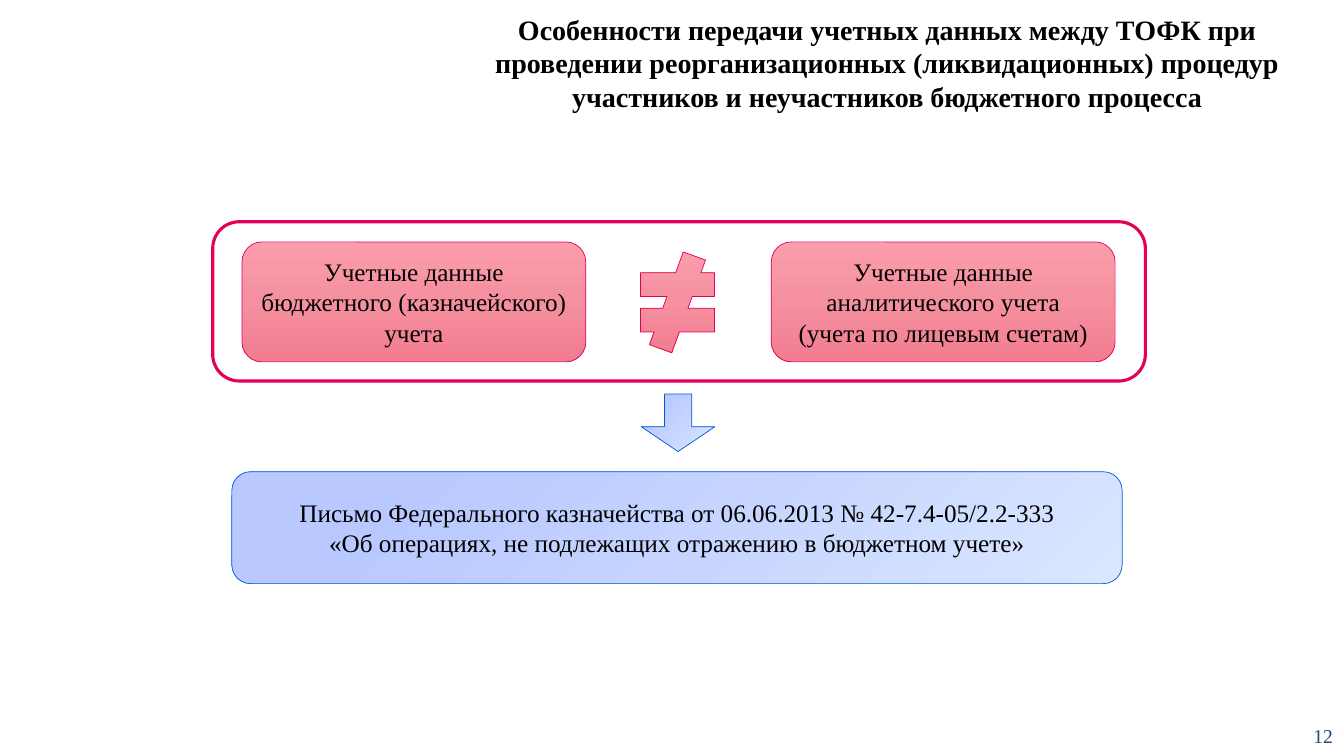
import pptx
import pptx.dml.color
import pptx.enum.shapes
import pptx.enum.text
import pptx.oxml
import pptx.oxml.ns
import pptx.util

Inches = pptx.util.Inches
Pt = pptx.util.Pt
SHAPE = pptx.enum.shapes.MSO_SHAPE
ALIGN = pptx.enum.text.PP_ALIGN
ANCHOR = pptx.enum.text.MSO_ANCHOR

FONT = "Times New Roman"
COLOURS = {
    "text": "000000", "number": "1F497D", "frame": "FFFFFF",
    "red line": "E40059", "red top": "FC9DAC", "red middle": "F490A0", "red bottom": "F27C90",
    "blue line": "005BD3", "blue start": "B9C8FF", "blue end": "D9E6FF",
}
GRADIENTS = {
    "red": ([(0, "red top"), (50, "red middle"), (100, "red bottom")],
            '<a:lin ang="5400000" scaled="0"/>'),
    "blue": ([(18, "blue start"), (100, "blue end")],
             '<a:path path="circle"><a:fillToRect r="100000" b="100000"/></a:path>'),
}


def colour(name):
    """Return the named colour."""
    return pptx.dml.color.RGBColor.from_string(COLOURS[name])


def write_lines(frame, lines, size, ink="text", bold=False, align=ALIGN.CENTER):
    """Write each line as one paragraph of the text frame."""
    frame.word_wrap = True
    frame.text = "\n".join(lines)
    for para in frame.paragraphs:
        para.alignment = align
        para.font.name = FONT
        para.font.size = Pt(size)
        para.font.bold = bold
        para.font.color.rgb = colour(ink)


def add_text(page, box, lines, size, anchor=ANCHOR.TOP, **style):
    """Add a text box in the given box."""
    frame = page.shapes.add_textbox(*map(Inches, box)).text_frame
    frame.vertical_anchor = anchor
    write_lines(frame, lines, size, **style)


def add_outlined(page, kind, box, line, width=0.5):
    """Add a preset shape with a coloured outline and no shadow."""
    shape = page.shapes.add_shape(kind, *map(Inches, box))
    shape.shadow.inherit = False
    shape.line.color.rgb = colour(line)
    shape.line.width = Pt(width)
    return shape


def add_gradient(page, kind, box, tone, lines=()):
    """Add a shape with a red or blue gradient and optional centred text."""
    shape = add_outlined(page, kind, box, f"{tone} line")
    stops, direction = GRADIENTS[tone]
    marks = "".join(
        f'<a:gs pos="{place * 1000}"><a:srgbClr val="{COLOURS[name]}"/></a:gs>'
        for place, name in stops)
    shape.element.spPr.find(pptx.oxml.ns.qn("a:prstGeom")).addnext(pptx.oxml.parse_xml(
        f'<a:gradFill {pptx.oxml.ns.nsdecls("a")} rotWithShape="1">'
        f'<a:gsLst>{marks}</a:gsLst>{direction}</a:gradFill>'))
    if lines:
        shape.text_frame.vertical_anchor = ANCHOR.MIDDLE
        write_lines(shape.text_frame, lines, 18)
    return shape


def add_comparison(page, left, top, width, height):
    """Add the frame with two kinds of records that are not equal."""
    frame = add_outlined(page, SHAPE.ROUNDED_RECTANGLE, (left, top, width, height), "red line", 2.25)
    frame.fill.solid()
    frame.fill.fore_color.rgb = colour("frame")
    records = [
        (0.29, ["Учетные данные бюджетного (казначейского) учета"]),
        (5.54, ["Учетные данные аналитического учета", "(учета по лицевым счетам)"]),
    ]
    for offset, lines in records:
        add_gradient(page, SHAPE.ROUNDED_RECTANGLE, (left + offset, top + 0.2, 3.41, 1.19), "red", lines)
    add_gradient(page, SHAPE.MATH_NOT_EQUAL, (left + 4.11, top + 0.3, 1, 1), "red")


def add_conclusion(page, left, top, width, height):
    """Add the letter box and the arrow that points down to it."""
    add_gradient(page, SHAPE.ROUNDED_RECTANGLE, (left, top, width, height), "blue", [
        "Письмо Федерального казначейства от 06.06.2013 № 42-7.4-05/2.2-333",
        "«Об операциях, не подлежащих отражению в бюджетном учете»",
    ])
    arrow = add_gradient(page, SHAPE.RIGHT_ARROW, (left + 4.14, top - 0.85, 0.57, 0.73), "blue")
    arrow.rotation = 90
    arrow.adjustments[0] = 0.372
    arrow.adjustments[1] = 0.432


def main():
    """Build the slide and save it."""
    deck = pptx.Presentation()
    deck.slide_width = Inches(13.33)
    deck.slide_height = Inches(7.5)
    page = deck.slides.add_slide(deck.slide_layouts[6])
    add_comparison(page, 2.11, 2.2, 9.25, 1.58)
    add_conclusion(page, 2.3, 4.68, 8.83, 1.11)
    add_text(page, (4.28, 0.07, 9.04, 1.11), [
        "Особенности передачи учетных данных между ТОФК при",
        "проведении реорганизационных (ликвидационных) процедур "
        "участников и неучастников бюджетного процесса",
    ], 20, bold=True)
    add_text(page, (12.86, 7.14, 0.46, 0.32), ["12"], 14, ANCHOR.MIDDLE,
             ink="number", align=ALIGN.RIGHT)
    deck.save("out.pptx")


if __name__ == "__main__":
    main()
